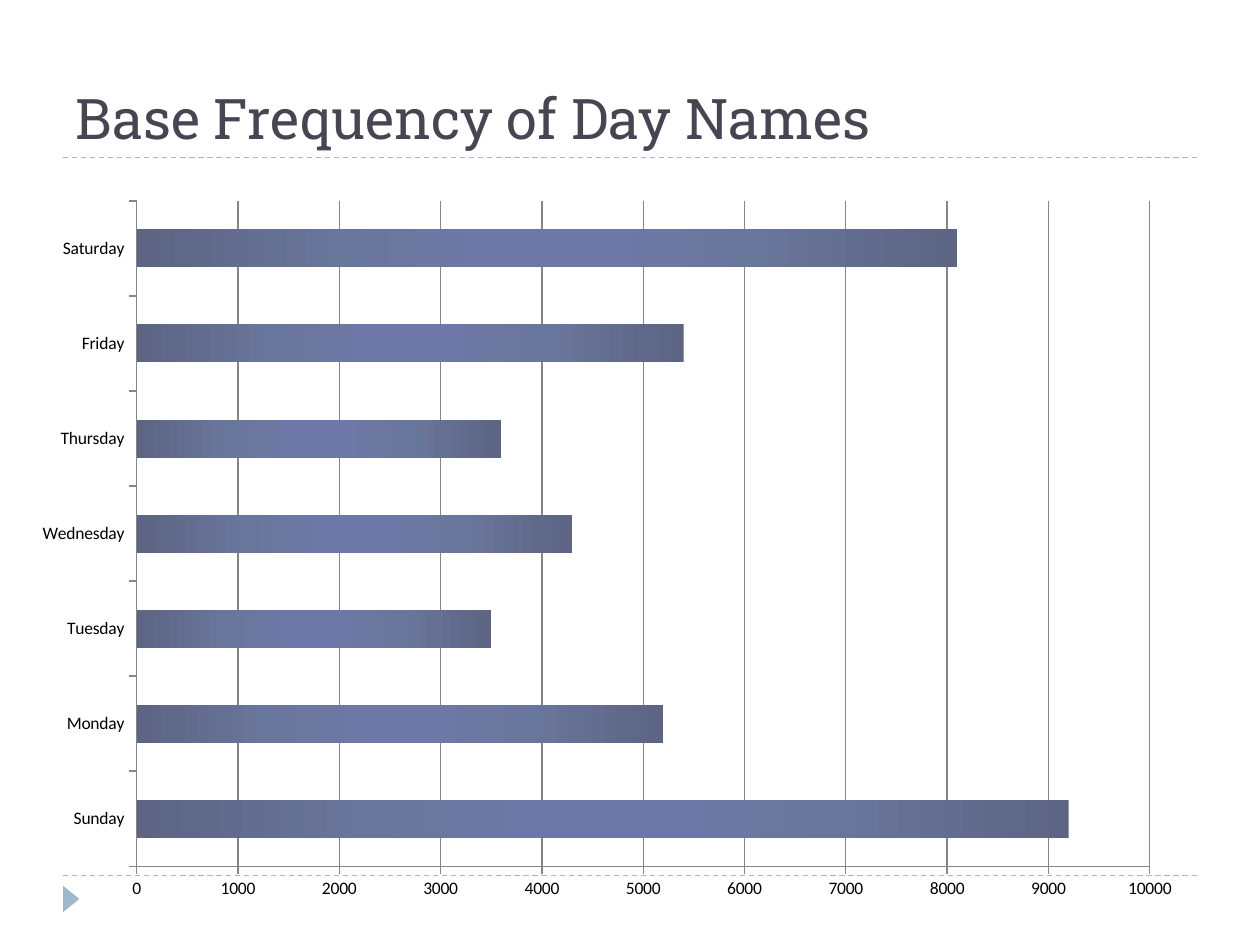
from typing import NamedTuple

from lxml import etree
from pptx import Presentation
from pptx.chart.data import CategoryChartData
from pptx.dml.color import RGBColor
from pptx.enum.chart import XL_CHART_TYPE, XL_TICK_MARK
from pptx.enum.dml import MSO_LINE
from pptx.enum.shapes import MSO_CONNECTOR, MSO_SHAPE
from pptx.enum.text import MSO_ANCHOR, MSO_AUTO_SIZE, PP_ALIGN
from pptx.oxml import parse_xml
from pptx.oxml.ns import nsdecls, qn
from pptx.util import Inches, Pt

BAR = XL_CHART_TYPE.BAR_CLUSTERED
OUTSIDE = XL_TICK_MARK.OUTSIDE
NO_TICK = XL_TICK_MARK.NONE
DASH = MSO_LINE.DASH
STRAIGHT = MSO_CONNECTOR.STRAIGHT
TRIANGLE = MSO_SHAPE.ISOSCELES_TRIANGLE
BOTTOM = MSO_ANCHOR.BOTTOM
NO_FIT = MSO_AUTO_SIZE.NONE
LEFT = PP_ALIGN.LEFT

ACCENT = "9FB8CD"
GRID = "868686"


class Rule(NamedTuple):
    left: float
    right: float
    y: float


class Day(NamedTuple):
    name: str
    count: int


class Stop(NamedTuple):
    percent: int
    color: str


RULES = [Rule(0.5, 9.5, 1.25), Rule(0.5, 9.5, 6.95)]
DAYS = [
    Day("Sunday", 9200),
    Day("Monday", 5200),
    Day("Tuesday", 3500),
    Day("Wednesday", 4300),
    Day("Thursday", 3600),
    Day("Friday", 5400),
    Day("Saturday", 8100),
]
STOPS = [
    Stop(0, "5D6484"),
    Stop(25, "69769B"),
    Stop(45, "6E78A8"),
    Stop(55, "6E78A8"),
    Stop(75, "69769B"),
    Stop(100, "5D6484"),
]


def rgb(color: str) -> RGBColor:
    return RGBColor.from_string(color)


def add_rule(s, rule: Rule) -> None:
    y = Inches(rule.y)
    sp = s.shapes.add_connector(STRAIGHT, Inches(rule.left), y, Inches(rule.right), y)
    sp.line.color.rgb = rgb(ACCENT)
    sp.line.width = Pt(0.75)
    sp.line.dash_style = DASH
    etree.SubElement(sp._element.spPr, qn("a:effectLst"))


def add_marker(s) -> None:
    sp = s.shapes.add_shape(TRIANGLE, Inches(0.46), Inches(7.07), Inches(0.21), Inches(0.13))
    sp.rotation = 90
    sp.shadow.inherit = False
    sp.fill.solid()
    sp.fill.fore_color.rgb = rgb(ACCENT)
    sp.line.fill.background()


def set_title(s, text: str) -> None:
    sp = s.shapes.title
    sp.left, sp.top, sp.width, sp.height = Inches(0.5), Inches(0.17), Inches(9), Inches(1.08)
    tf = sp.text_frame
    tf.word_wrap = True
    tf.auto_size = NO_FIT
    tf.vertical_anchor = BOTTOM
    p = tf.paragraphs[0]
    p.alignment = LEFT
    r = p.add_run()
    r.text = text
    r.font.name = "Roboto Slab"
    r.font.size = Pt(32)
    r.font.color.rgb = rgb("464653")


def set_gradient(series, stops: list[Stop]) -> None:
    marks = "".join(
        f'<a:gs pos="{stop.percent * 1000}"><a:srgbClr val="{stop.color}"/></a:gs>'
        for stop in stops
    )
    sp_pr = series.format.fill._xPr
    sp_pr.insert(0, parse_xml(
        f'<a:gradFill {nsdecls("a")} rotWithShape="1"><a:gsLst>{marks}</a:gsLst>'
        '<a:lin ang="0" scaled="1"/></a:gradFill>'
    ))


def set_plot_layout(chart, x: float, y: float, w: float, h: float) -> None:
    plot_area = chart._chartSpace.chart.plotArea
    for old in plot_area.findall(qn("c:layout")):
        plot_area.remove(old)
    plot_area.insert(0, parse_xml(
        f'<c:layout {nsdecls("c")}><c:manualLayout><c:layoutTarget val="inner"/>'
        '<c:xMode val="edge"/><c:yMode val="edge"/>'
        f'<c:x val="{x}"/><c:y val="{y}"/><c:w val="{w}"/><c:h val="{h}"/>'
        '</c:manualLayout></c:layout>'
    ))


def style_line(line) -> None:
    line.color.rgb = rgb(GRID)
    line.width = Pt(0.75)


def add_day_chart(s, days: list[Day]) -> None:
    data = CategoryChartData()
    data.categories = [day.name for day in days]
    data.add_series("Series 1", [day.count for day in days])
    chart = s.shapes.add_chart(
        BAR, Inches(0.15), Inches(1.48), Inches(9.35), Inches(5.74), data
    ).chart
    chart.has_legend = False
    chart.has_title = False
    chart.font.name = "Calibri"
    chart.font.size = Pt(10)
    chart.font.color.rgb = rgb("000000")
    for axis in (chart.category_axis, chart.value_axis):
        axis.major_tick_mark = OUTSIDE
        axis.minor_tick_mark = NO_TICK
        style_line(axis.format.line)
    values = chart.value_axis
    values.minimum_scale, values.maximum_scale, values.major_unit = 0, 10000, 1000
    values.has_major_gridlines = True
    style_line(values.major_gridlines.format.line)
    values.tick_labels.number_format = "General"
    values.tick_labels.number_format_is_linked = False
    plot = chart.plots[0]
    plot.gap_width = 150
    plot.vary_by_categories = False
    set_gradient(plot.series[0], STOPS)
    set_plot_layout(chart, 0.1, 0.02, 0.86, 0.92)


def main() -> None:
    prs = Presentation()
    prs.slide_width, prs.slide_height = Inches(10), Inches(7.5)
    s = prs.slides.add_slide(prs.slide_layouts[5])
    for rule in RULES:
        add_rule(s, rule)
    add_marker(s)
    set_title(s, "Base Frequency of Day Names")
    add_day_chart(s, DAYS)
    prs.save("out.pptx")


if __name__ == "__main__":
    main()
